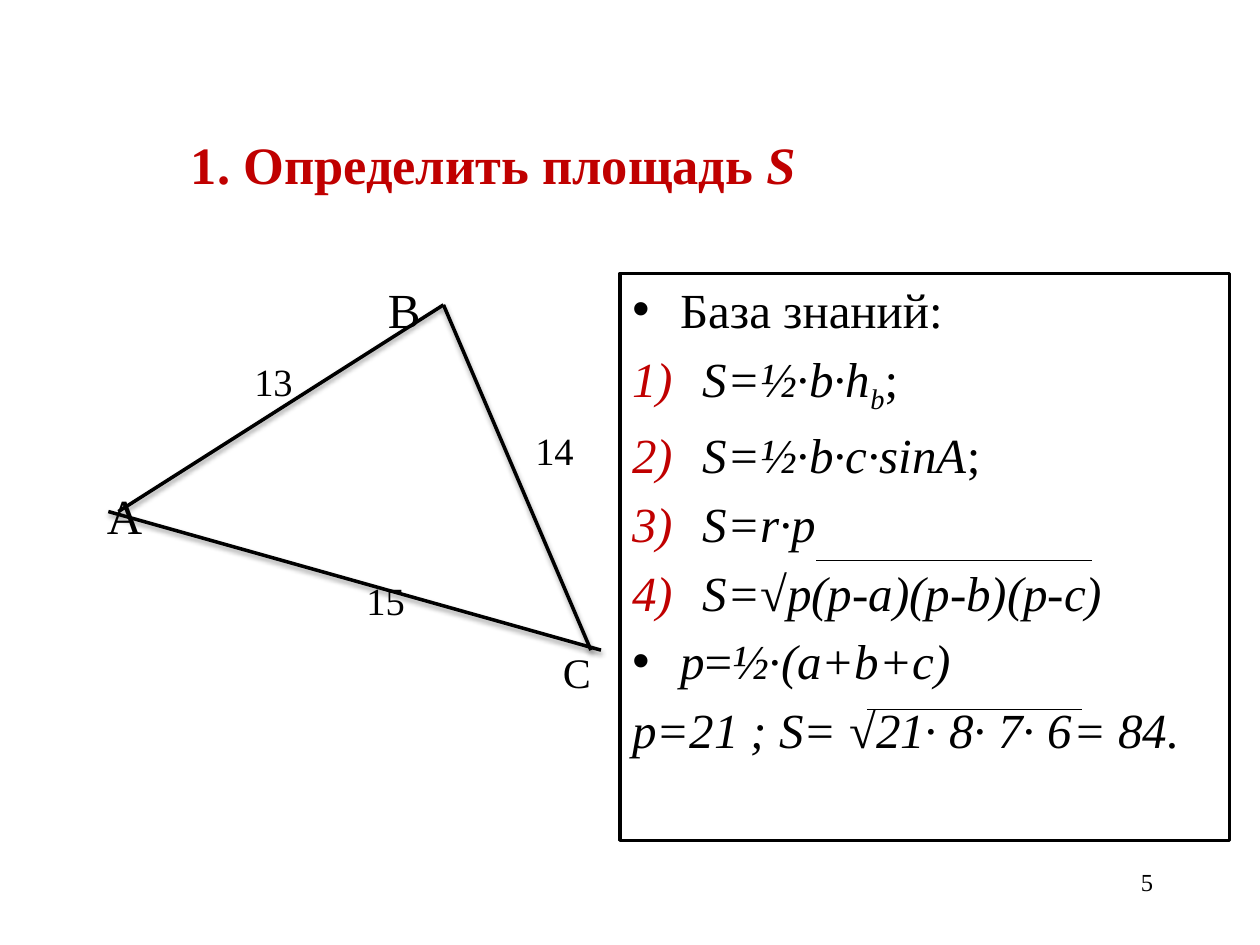
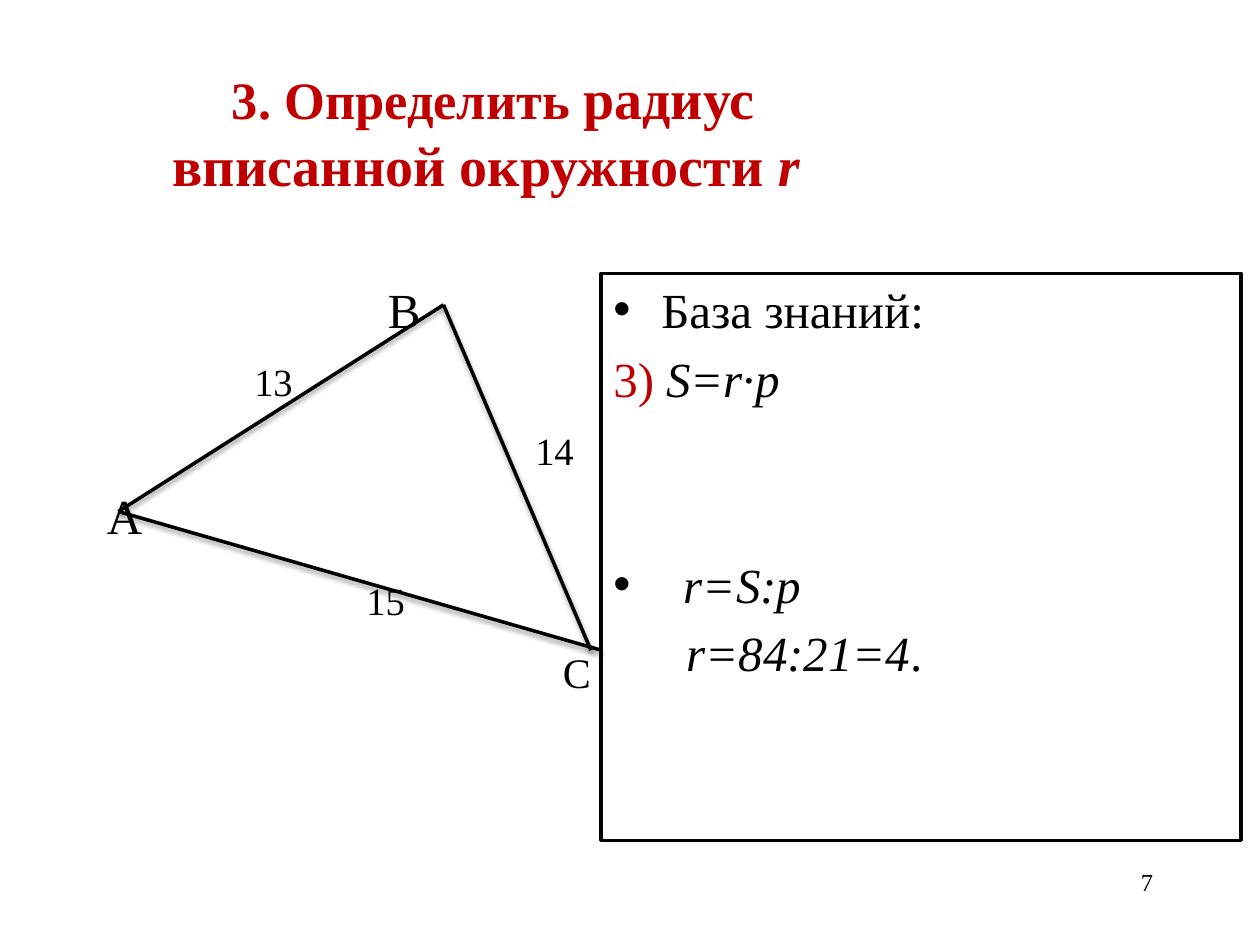
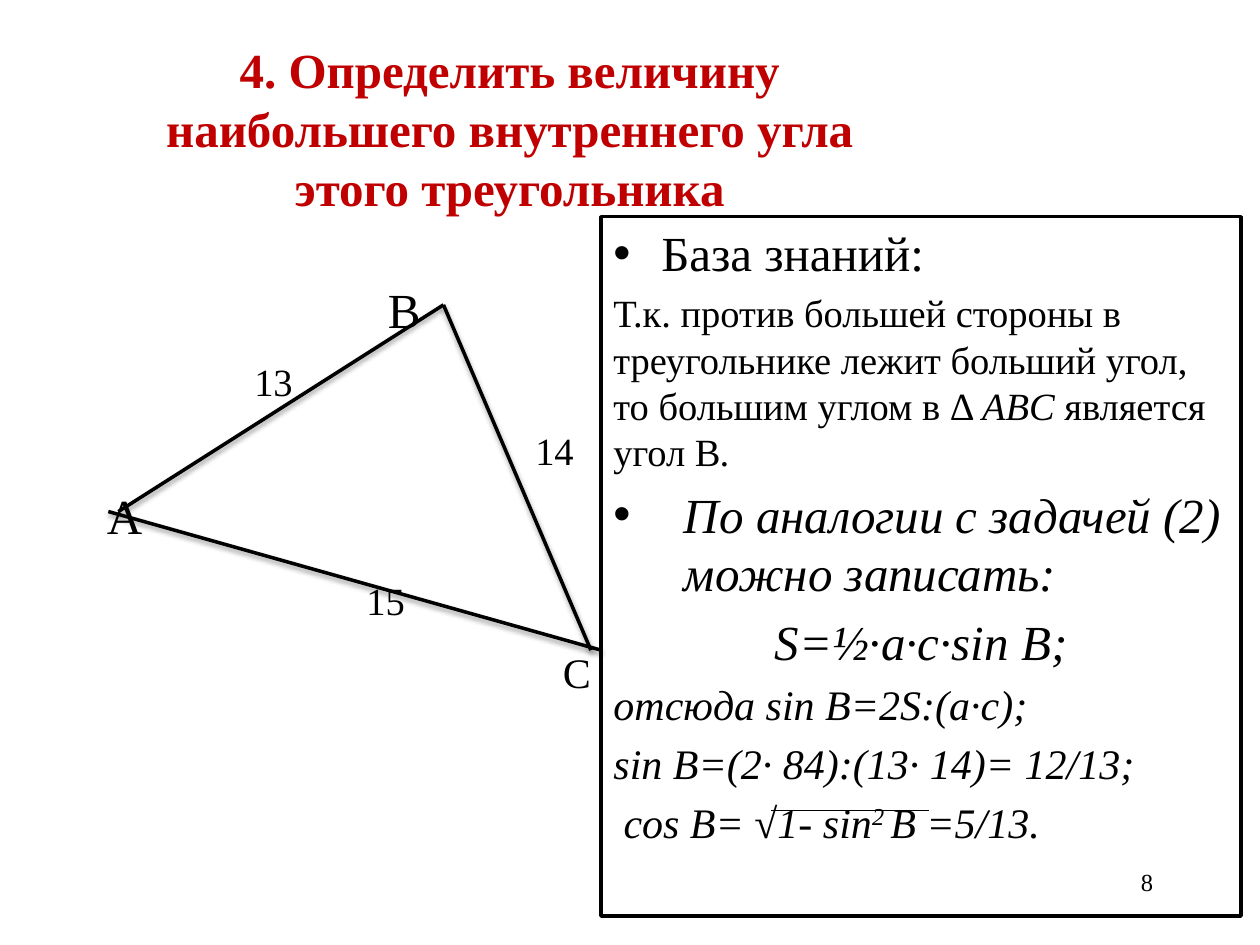
from lxml.etree import SubElement
from pptx import Presentation
from pptx.dml.color import RGBColor
from pptx.enum.text import MSO_ANCHOR, PP_ALIGN
from pptx.enum.shapes import MSO_CONNECTOR
from pptx.oxml.ns import qn
from pptx.util import Inches, Pt

BLACK = RGBColor(0x00, 0x00, 0x00)
RED = RGBColor(0xC0, 0x00, 0x00)
FONT = "Times New Roman"
BASELINES = {"sub": "-25000", "sup": "30000"}


def para(*runs, size=28, left=0.0, hang=0.0, bullet=None, before=None,
         align=PP_ALIGN.LEFT, tab=None):
    """Runs are (text, styles) pairs; styles hold words such as "i" or "red"."""
    return dict(runs=runs, size=size, left=left, hang=hang, bullet=bullet,
                before=0.2 * size if before is None else before,
                align=align, tab=tab)


def formula(*runs):
    return para(*runs, left=0.56, hang=0.56, bullet="1)")


# Content shared by the three problems
KNOWLEDGE = para(("База знаний:", ""), left=0.38, hang=0.38, bullet="•")
TRIANGLE_LABELS = [
    para(("B", ""), left=2.23),
    para(("13", ""), size=22, left=1.17, before=11.3),
    para(("14", ""), size=22, left=3.4, before=12.8),
    para(("A", ""), before=7.1),
]
VERTEX_A, VERTEX_B, VERTEX_C = (0.94, 4.06), (3.52, 2.42), (4.69, 5.16)
BASE_END = (4.77, 5.16)

# Content of each problem
PROBLEMS = [
    dict(
        number="5",
        title=[("1. Определить площадь ", 30, "b"), ("S", 30, "b i")],
        title_box=(0.75, 0.67, 6.33, 1.25),
        panel_box=(4.92, 2.17, 4.84, 4.5),
        base_start=0.86,
        solution=[
            KNOWLEDGE,
            formula(("S=½·b·h", "i"), ("b", "i sub"), (";", "")),
            formula(("S=½·b·с·sinA", "i"), (";", "")),
            formula(("S=r·p", "i")),
            formula(("S=√p(p-a)(p-b)(p-c)", "i")),
            para(("p", "i"), ("=", ""), ("½·(a+b+c)", "i"),
                 left=0.38, hang=0.38, bullet="•"),
            para(("p=21 ; S= √21· 8· 7· 6\t= 84.", "i"), tab=3.71),
        ],
        root_bars=[(6.48, 8.67, 4.45), (6.88, 8.59, 5.63)],
    ),
    dict(
        number="7",
        title=[("3. Определить ", 30, "b"),
               ("радиус вписанной окружности ", 32, "b"), ("r ", 32, "b i")],
        title_box=(0.75, 0.41, 6.33, 1.25),
        panel_box=(4.77, 2.17, 5.08, 4.5),
        base_start=0.94,
        solution=[
            KNOWLEDGE,
            para(("3) ", "red"), ("S=r·p", "i"), left=0.56, hang=0.56),
            para(("r=S:p", "i"), left=0.56, hang=0.56, bullet="•", before=84),
            para(("r=84:21=4", "i"), (".", ""), left=0.58),
        ],
        root_bars=[],
    ),
    dict(
        number="8",
        title=[("4. Определить величину наибольшего внутреннего угла "
                "этого треугольника", 28, "b")],
        title_box=(0.75, 0.31, 6.59, 1.41),
        panel_box=(4.77, 1.72, 5.08, 5.55),
        base_start=0.86,
        solution=[
            KNOWLEDGE,
            para(("Т.к. против большей стороны в треугольнике лежит больший "
                  "угол, то большим углом в Δ ", ""), ("ABC ", "i"),
                 ("является угол B", ""), (".", "i"), size=22),
            para(("По аналогии с задачей (2) можно записать:", "i"),
                 left=0.56, hang=0.56, bullet="•"),
            para(("S=½·a·с·sin B;", "i"), left=0.56, hang=0.56,
                 align=PP_ALIGN.CENTER),
            para(("отсюда sin B=2S:(a·c);", "i"), size=24),
            para(("sin B=(2· 84):(13· 14)= 12/13;", "i"), size=24),
            para(("cos B= √1- sin", "i"), ("2 ", "i sup"), ("B =5/13.", "i"),
                 size=24, left=0.08),
        ],
        root_bars=[(6.12, 7.37, 6.43)],
    ),
]


def add_run(paragraph, text, size, styles="", color=BLACK):
    run = paragraph.add_run()
    run.text = text
    font = run.font
    font.name, font.size = FONT, Pt(size)
    words = styles.split()
    font.bold, font.italic = "b" in words, "i" in words
    font.color.rgb = RED if "red" in words else color
    for word in words:
        if word in BASELINES:
            run._r.get_or_add_rPr().set("baseline", BASELINES[word])


def add_box(slide, box):
    area = slide.shapes.add_textbox(*map(Inches, box))
    area.text_frame.word_wrap = True
    return area


def format_paragraph(paragraph, content, first):
    props = paragraph._p.get_or_add_pPr()
    props.set("marL", str(Inches(content["left"])))
    props.set("indent", str(-Inches(content["hang"])))
    if content["bullet"] == "•":
        SubElement(props, qn("a:buFont"), typeface="Arial")
        SubElement(props, qn("a:buChar"), char="•")
    elif content["bullet"]:
        color = SubElement(props, qn("a:buClr"))
        SubElement(color, qn("a:srgbClr"), val=str(RED))
        SubElement(props, qn("a:buFont"), typeface="+mj-lt")
        SubElement(props, qn("a:buAutoNum"), type="arabicParenR")
    if content["tab"]:
        tabs = SubElement(props, qn("a:tabLst"))
        SubElement(tabs, qn("a:tab"), pos=str(Inches(content["tab"])), algn="l")
    paragraph.alignment = content["align"]
    paragraph.space_before = Pt(0 if first else content["before"])


def add_paragraphs(slide, box, contents):
    area = add_box(slide, box)
    for index, content in enumerate(contents):
        frame = area.text_frame
        paragraph = frame.add_paragraph() if index else frame.paragraphs[0]
        format_paragraph(paragraph, content, first=index == 0)
        for text, styles in content["runs"]:
            add_run(paragraph, text, content["size"], styles)
    return area


def add_line(slide, start, end, width, shadow=False):
    line = slide.shapes.add_connector(
        MSO_CONNECTOR.STRAIGHT, *map(Inches, (*start, *end)))
    line.line.color.rgb = BLACK
    line.line.width = Pt(width)
    effects = SubElement(line._element.spPr, qn("a:effectLst"))
    if shadow:
        outer = SubElement(effects, qn("a:outerShdw"), blurRad=str(Pt(3.1)),
                           dist=str(Pt(1.6)), dir="5400000", rotWithShape="0")
        color = SubElement(outer, qn("a:srgbClr"), val=str(BLACK))
        SubElement(color, qn("a:alpha"), val="38000")


def add_title(slide, box, runs):
    frame = add_box(slide, box).text_frame
    frame.vertical_anchor = MSO_ANCHOR.MIDDLE
    frame.paragraphs[0].alignment = PP_ALIGN.CENTER
    for text, size, styles in runs:
        add_run(frame.paragraphs[0], text, size, styles, RED)


def add_triangle(slide, base_start):
    add_paragraphs(slide, (0.75, 2.17, 4.17, 4.5), TRIANGLE_LABELS)
    sides = [(VERTEX_A, VERTEX_B), (VERTEX_B, VERTEX_C),
             ((base_start, VERTEX_A[1]), BASE_END)]
    for start, end in sides:
        add_line(slide, start, end, 2, shadow=True)
    add_paragraphs(slide, (2.81, 4.53, 0.63, 0.47), [para(("15", ""), size=22)])
    add_paragraphs(slide, (4.37, 5.08, 0.47, 0.5), [para(("C", ""), size=24)])


def add_problem(deck, problem):
    slide = deck.slides.add_slide(deck.slide_layouts[6])
    add_title(slide, problem["title_box"], problem["title"])
    # Solution panel
    panel = add_paragraphs(slide, problem["panel_box"], problem["solution"])
    panel.line.color.rgb = BLACK
    panel.line.width = Pt(2)
    add_triangle(slide, problem["base_start"])
    # Bars over the square roots
    for left, right, top in problem["root_bars"]:
        add_line(slide, (left, top), (right, top), 0.75)
    # Slide number
    add_paragraphs(slide, (7.17, 6.83, 2.08, 0.5),
                   [para((problem["number"], ""), size=14,
                         align=PP_ALIGN.RIGHT)])


def main():
    deck = Presentation()
    deck.slide_width, deck.slide_height = Inches(10), Inches(7.5)
    for problem in PROBLEMS:
        add_problem(deck, problem)
    deck.save("out.pptx")


if __name__ == "__main__":
    main()
